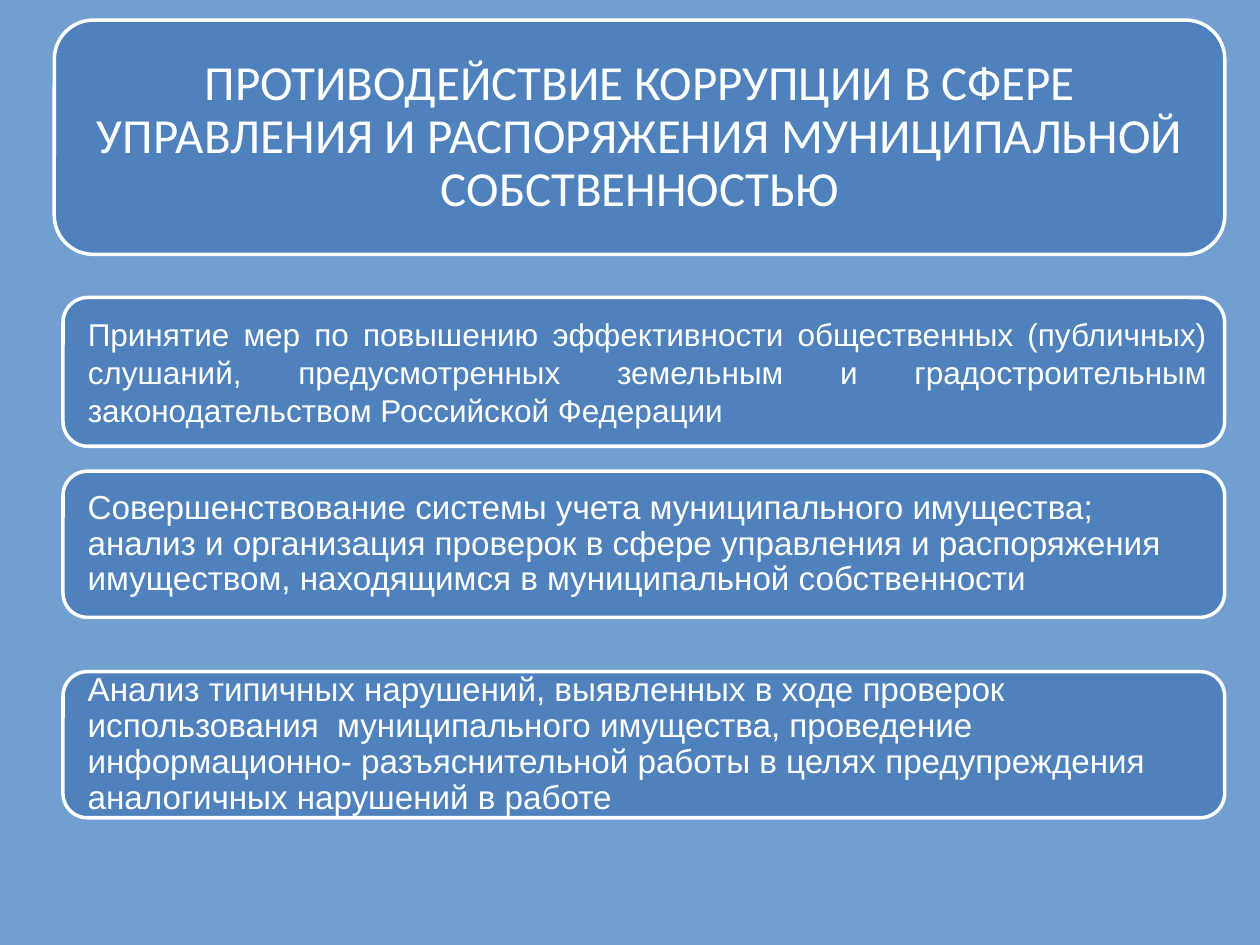
import pptx
import pptx.util
import pptx.dml.color
import pptx.enum.shapes
import pptx.enum.text

Pt = pptx.util.Pt
ALIGN = pptx.enum.text.PP_ALIGN

# Content
TITLE = ("ПРОТИВОДЕЙСТВИЕ КОРРУПЦИИ В СФЕРЕ УПРАВЛЕНИЯ И РАСПОРЯЖЕНИЯ "
         "МУНИЦИПАЛЬНОЙ СОБСТВЕННОСТЬЮ")
HEARINGS = ("Принятие мер по повышению эффективности общественных (публичных) слушаний, "
            "предусмотренных земельным и градостроительным законодательством "
            "Российской Федерации")
ACCOUNTING = ("Совершенствование системы учета муниципального имущества; анализ и "
              "организация проверок в сфере управления и распоряжения имуществом, "
              "находящимся в муниципальной собственности")
VIOLATIONS = ("Анализ типичных нарушений, выявленных в ходе проверок использования  "
              "муниципального имущества, проведение информационно- разъяснительной "
              "работы в целях предупреждения аналогичных нарушений в работе")

COLORS = {"background": "729FCF", "panel": "4F81BD", "white": "FFFFFF"}

# Paragraph formats
TITLE_FORMAT = {"alignment": ALIGN.CENTER, "line_spacing": 0.9, "space_after": Pt(9.8)}
JUSTIFIED = {"alignment": ALIGN.JUSTIFY}
LEFT = {"alignment": ALIGN.LEFT, "line_spacing": 0.9, "space_after": Pt(6.7)}

# Measures: cards are (text, top, height, font size, paragraph format)
CARD_LEFT, CARD_WIDTH = 36, 663.8
CARDS = [
    (HEARINGS, 170, 85, 18, JUSTIFIED),
    (ACCOUNTING, 269.3, 83.5, 19, LEFT),
    (VIOLATIONS, 383.8, 83.5, 19, LEFT),
]
HEADER_BOX = (31, 11.5, 668.9, 133.9)
TITLE_BOX = (35.3, 18, 660.2, 121)
CARD_MARGINS = (10, 10, 5.8, 10)
TITLE_MARGINS = (14.4, 14.4, 14.4, 14.4)


def color(name):
    return pptx.dml.color.RGBColor.from_string(COLORS[name])


def set_values(target, values):
    for name, value in values.items():
        setattr(target, name, value)


def add_panel(slide, box):
    shape = slide.shapes.add_shape(
        pptx.enum.shapes.MSO_SHAPE.ROUNDED_RECTANGLE, *map(Pt, box))
    shape.adjustments[0] = 0.167
    shape.shadow.inherit = False
    shape.fill.solid()
    shape.fill.fore_color.rgb = color("panel")
    shape.line.color.rgb = color("white")
    shape.line.width = Pt(2)
    return shape


def write_text(shape, text, font_name, size, margins, paragraph_format):
    frame = shape.text_frame
    frame.text = text
    sides = ("margin_left", "margin_top", "margin_right", "margin_bottom")
    set_values(frame, dict(zip(sides, map(Pt, margins))))
    set_values(frame, {"word_wrap": True,
                       "auto_size": pptx.enum.text.MSO_AUTO_SIZE.NONE,
                       "vertical_anchor": pptx.enum.text.MSO_ANCHOR.MIDDLE})
    paragraph = frame.paragraphs[0]
    set_values(paragraph, paragraph_format)
    font = paragraph.runs[0].font
    set_values(font, {"name": font_name, "size": Pt(size)})
    font.color.rgb = color("white")


def main():
    presentation = pptx.Presentation()
    set_values(presentation, {"slide_width": Pt(720), "slide_height": Pt(540)})
    slide = presentation.slides.add_slide(presentation.slide_layouts[5])
    slide.background.fill.solid()
    slide.background.fill.fore_color.rgb = color("background")

    # Cards
    for text, top, height, size, paragraph_format in CARDS:
        card = add_panel(slide, (CARD_LEFT, top, CARD_WIDTH, height))
        write_text(card, text, "Arial", size, CARD_MARGINS, paragraph_format)

    # Header panel with the title in front of it
    add_panel(slide, HEADER_BOX)
    title = slide.shapes.title
    set_values(title, dict(zip(("left", "top", "width", "height"), map(Pt, TITLE_BOX))))
    write_text(title, TITLE, "Calibri", 28, TITLE_MARGINS, TITLE_FORMAT)
    slide.shapes.element.append(title.element)

    presentation.save("out.pptx")


if __name__ == "__main__":
    main()
